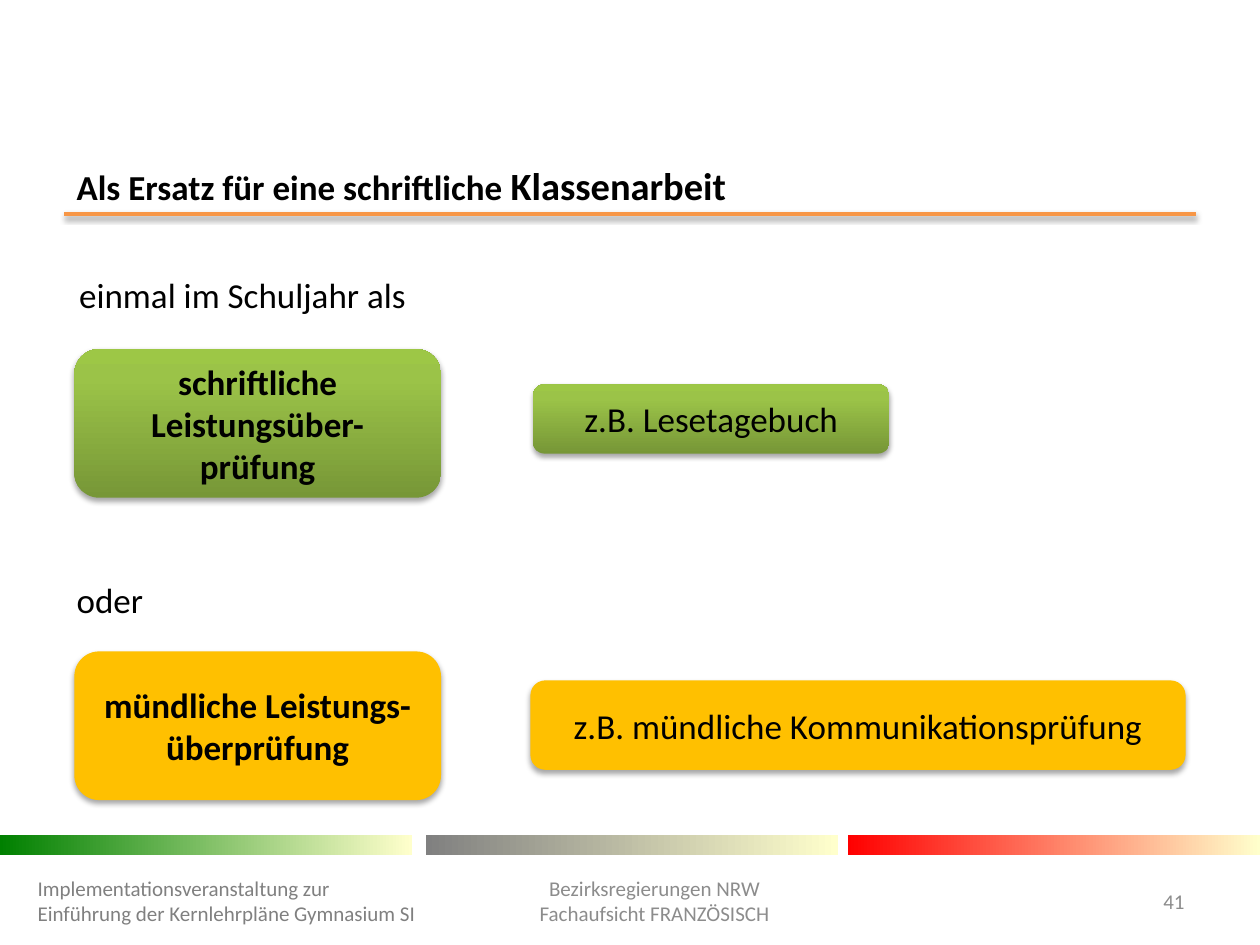
"""Builds the slide on replacing a written class test."""
from lxml.etree import SubElement
from pptx import Presentation
from pptx.dml.color import RGBColor
from pptx.enum.shapes import MSO_CONNECTOR as Connector, MSO_SHAPE as Shape
from pptx.enum.text import MSO_ANCHOR as Anchor, MSO_AUTO_SIZE as AutoSize, PP_ALIGN as Align
from pptx.oxml.ns import qn
from pptx.util import Inches, Pt

BLACK = RGBColor(0x00, 0x00, 0x00)
DARK_GRAY = RGBColor(0x80, 0x80, 0x80)
LIGHT_GRAY = RGBColor(0x8C, 0x8C, 0x8C)
ORANGE = RGBColor(0xF7, 0x96, 0x46)
AMBER = RGBColor(0xFF, 0xC0, 0x00)
GREEN = RGBColor(0x00, 0x80, 0x00)
RED = RGBColor(0xFF, 0x00, 0x00)
CREAM = RGBColor(0xFF, 0xFF, 0xCC)
GREEN_STOPS = [
    (0, RGBColor(0x77, 0x97, 0x37)),
    (80, RGBColor(0x9B, 0xC3, 0x48)),
    (100, RGBColor(0x9D, 0xC7, 0x46)),
]


def add_run(paragraph, text, size=20, color=BLACK, bold=False, font="Calibri"):
    run = paragraph.add_run()
    run.text = text
    run.font.name = font
    run.font.size = Pt(size)
    run.font.bold = bold
    run.font.color.rgb = color


def write(frame, text, align=Align.LEFT, anchor=Anchor.MIDDLE, **style):
    frame.word_wrap = True
    frame.vertical_anchor = anchor
    for index, line in enumerate(text.split("\n")):
        paragraph = frame.paragraphs[0] if index == 0 else frame.add_paragraph()
        paragraph.alignment = align
        add_run(paragraph, line, **style)


def set_gradient(fill, stops, angle=0):
    fill.gradient()
    fill.gradient_angle = angle
    stop_list = fill._xPr.find(qn("a:gradFill")).find(qn("a:gsLst"))
    for stop in list(stop_list):
        stop_list.remove(stop)
    for position, color in stops:
        stop = SubElement(stop_list, qn("a:gs"), pos=str(position * 1000))
        SubElement(stop, qn("a:srgbClr"), val=str(color))


def set_shadow(shape, opacity, distance):
    effects = SubElement(shape._element.spPr, qn("a:effectLst"))
    shadow = SubElement(
        effects, qn("a:outerShdw"), blurRad=str(Pt(3.1)), dist=str(Pt(distance)),
        dir="5400000", rotWithShape="0",
    )
    color = SubElement(shadow, qn("a:srgbClr"), val=str(BLACK))
    SubElement(color, qn("a:alpha"), val=str(opacity * 1000))


class SlideBuilder:
    def __init__(self, slide):
        self.slide = slide

    def text(self, text, left, top, width, height, grow=False, **style):
        box = self.slide.shapes.add_textbox(
            Inches(left), Inches(top), Inches(width), Inches(height))
        write(box.text_frame, text, **style)
        if grow:
            box.text_frame.auto_size = AutoSize.SHAPE_TO_FIT_TEXT
        return box

    def rule(self, left, right, top):
        line = self.slide.shapes.add_connector(
            Connector.STRAIGHT, Inches(left), Inches(top), Inches(right), Inches(top))
        line.line.color.rgb = ORANGE
        line.line.width = Pt(2)
        set_shadow(line, 38, 1.6)

    def bar(self, left, color):
        bar = self.slide.shapes.add_shape(
            Shape.RECTANGLE, Inches(left), Inches(6.63), Inches(3.27), Inches(0.16))
        set_gradient(bar.fill, [(0, color), (100, CREAM)])
        bar.line.fill.background()
        bar.shadow.inherit = False

    def card(self, text, left, top, width, height, color=None, **style):
        card = self.slide.shapes.add_shape(
            Shape.ROUNDED_RECTANGLE, Inches(left), Inches(top), Inches(width), Inches(height))
        if color is None:
            set_gradient(card.fill, GREEN_STOPS, angle=90)
        else:
            card.fill.solid()
            card.fill.fore_color.rgb = color
        card.line.fill.background()
        set_shadow(card, 35, 1.8)
        write(card.text_frame, text, align=Align.CENTER, **style)


def main():
    presentation = Presentation()
    presentation.slide_width = Inches(10)
    presentation.slide_height = Inches(7.5)
    builder = SlideBuilder(presentation.slides.add_slide(presentation.slide_layouts[6]))

    builder.rule(0.51, 9.49, 1.7)
    for left, color in [(0, GREEN), (3.38, DARK_GRAY), (6.73, RED)]:
        builder.bar(left, color)

    builder.text("Implementationsveranstaltung zur Einführung der Kernlehrpläne Gymnasium SI",
                 0.2, 6.95, 3.24, 0.4, size=12, color=DARK_GRAY)
    builder.text("Bezirksregierungen NRW\nFachaufsicht FRANZÖSISCH",
                 3.74, 6.79, 2.91, 0.71, align=Align.CENTER, size=12, color=LIGHT_GRAY)
    builder.text("41", 8.86, 6.95, 0.64, 0.4, align=Align.RIGHT, size=12, color=LIGHT_GRAY)

    title = builder.text("Als Ersatz für eine schriftliche ", 0.51, 1.24, 8.93, 0.47,
                         grow=True, anchor=Anchor.TOP, bold=True)
    add_run(title.text_frame.paragraphs[0], "Klassenarbeit", size=22, bold=True)
    builder.text("einmal im Schuljahr als", 0.53, 2.12, 8.93, 0.44, grow=True, anchor=Anchor.TOP)
    builder.text("oder", 0.51, 4.54, 8.93, 0.44, grow=True, anchor=Anchor.TOP)

    builder.card("schriftliche Leistungsüber-prüfung", 0.59, 2.77, 2.91, 1.18, bold=True)
    builder.card("z.B. Lesetagebuch", 4.23, 3.05, 2.83, 0.55)
    builder.card("mündliche Leistungs-überprüfung", 0.59, 5.17, 2.91, 1.18, AMBER, bold=True)
    builder.card("z.B. mündliche Kommunikationsprüfung", 4.21, 5.4, 5.2, 0.71, AMBER)

    presentation.save("out.pptx")


if __name__ == "__main__":
    main()
